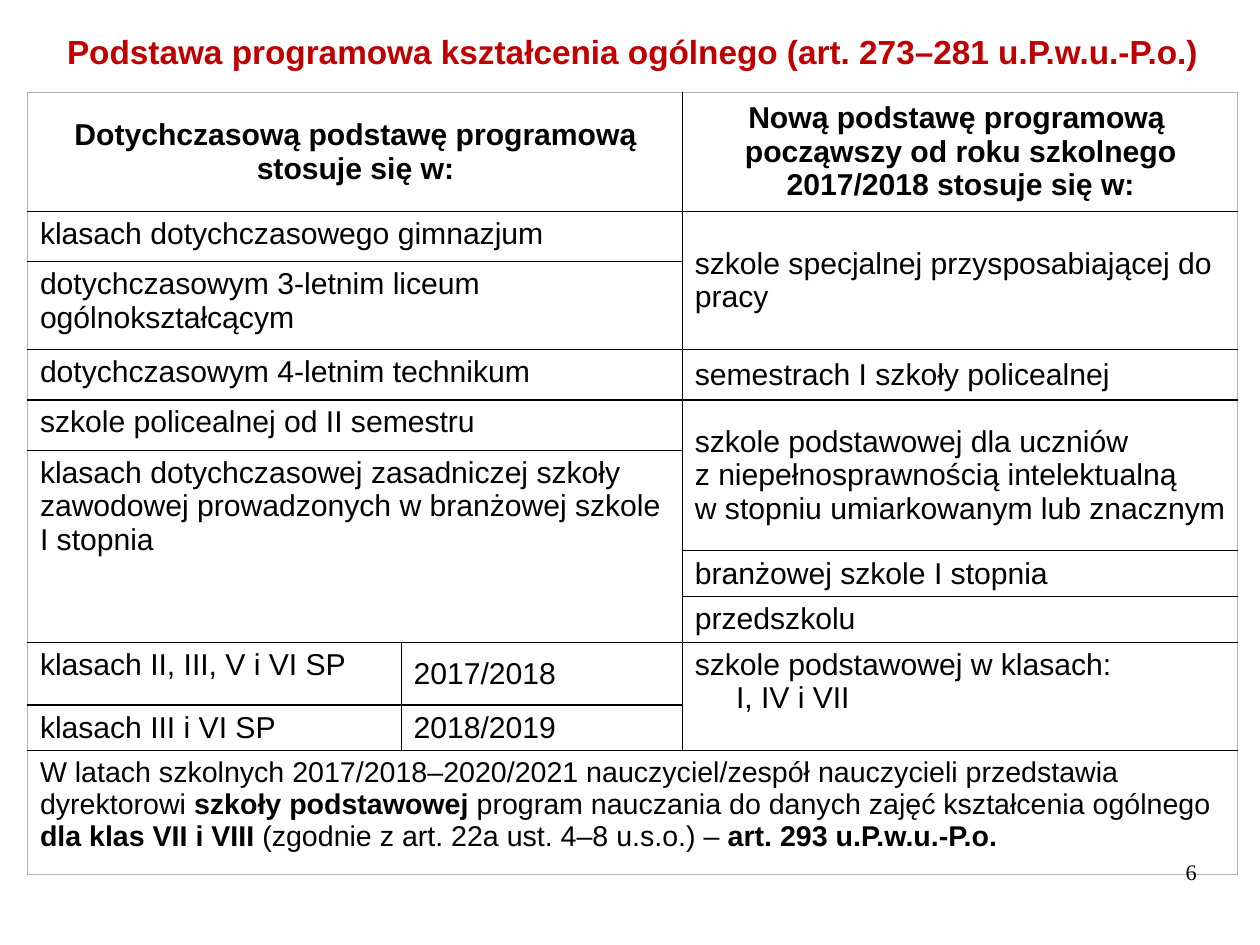
from lxml.etree import SubElement
from pptx import Presentation
from pptx.dml.color import RGBColor
from pptx.enum.text import MSO_ANCHOR, PP_ALIGN
from pptx.oxml.ns import qn
from pptx.util import Inches, Pt

RED = RGBColor(0xC0, 0x00, 0x00)
BLACK = RGBColor(0x00, 0x00, 0x00)
GREY = RGBColor(0xB2, 0xB2, 0xB2)
TOP, MIDDLE = MSO_ANCHOR.TOP, MSO_ANCHOR.MIDDLE

PAGE_WIDTH, PAGE_HEIGHT = Inches(28 / 2.54), Inches(21 / 2.54)  # 28 by 21 cm
TITLE = "Podstawa programowa kształcenia ogólnego (art. 273–281 u.P.w.u.-P.o.)"
PAGE_NUMBER = "6"
COLUMNS = [3.27, 2.46, 4.86]
ROWS = [1.04, 0.44, 0.77, 0.44, 0.44, 0.88, 0.4, 0.4, 0.55, 0.4, 1.08]

# row, column, rows spanned, columns spanned, anchor, paragraphs
HEADERS = [
    (0, 0, 1, 2, MIDDLE, ["Dotychczasową podstawę programową stosuje się w:"]),
    (0, 2, 1, 1, MIDDLE, ["Nową podstawę programową ",
                          "począwszy od roku szkolnego 2017/2018 stosuje się w:"]),
]
ENTRIES = [
    (1, 0, 1, 2, TOP, ["klasach dotychczasowego gimnazjum"]),
    (1, 2, 2, 1, MIDDLE, ["szkole specjalnej przysposabiającej do pracy"]),
    (2, 0, 1, 2, TOP, ["dotychczasowym 3-letnim liceum ogólnokształcącym"]),
    (3, 0, 1, 2, TOP, ["dotychczasowym 4-letnim technikum"]),
    (3, 2, 1, 1, MIDDLE, ["semestrach I szkoły policealnej"]),
    (4, 0, 1, 2, TOP, ["szkole policealnej od II semestru"]),
    (4, 2, 2, 1, MIDDLE, ["szkole podstawowej dla uczniów\nz niepełnosprawnością intelektualną\n"
                          "w stopniu umiarkowanym lub znacznym"]),
    (5, 0, 3, 2, TOP, ["klasach dotychczasowej zasadniczej szkoły zawodowej "
                       "prowadzonych w branżowej szkole I stopnia"]),
    (6, 2, 1, 1, MIDDLE, ["branżowej szkole I stopnia"]),
    (7, 2, 1, 1, MIDDLE, ["przedszkolu"]),
    (8, 0, 1, 1, TOP, ["klasach II, III, V i VI SP"]),
    (8, 1, 1, 1, MIDDLE, ["2017/2018"]),
    (8, 2, 2, 1, TOP, ["szkole podstawowej w klasach:", "I, IV i VII"]),
    (9, 0, 1, 1, TOP, ["klasach III i VI SP"]),
    (9, 1, 1, 1, MIDDLE, ["2018/2019"]),
]
NOTE_SPANS = [
    ("W latach szkolnych 2017/2018–2020/2021 nauczyciel/zespół nauczycieli "
     "przedstawia dyrektorowi ", False),
    ("szkoły podstawowej ", True),
    ("program nauczania do danych zajęć kształcenia ogólnego ", False),
    ("dla klas VII i VIII ", True),
    ("(zgodnie z art. 22a ust. 4–8 u.s.o.) – ", False),
    ("art. 293 u.P.w.u.-P.o.", True),
]


def add_span(para, text, size, bold=False, color=BLACK, font="Arial"):
    for number, line in enumerate(text.split("\n")):
        if number:
            para.add_line_break()
        span = para.add_run()
        span.text = line
        span.font.name, span.font.size, span.font.bold = font, Pt(size), bold
        span.font.color.rgb = color


def clear_insets(frame):
    frame.margin_left = frame.margin_right = frame.margin_top = frame.margin_bottom = 0
    frame.word_wrap = True


def set_borders(cell, row, column):
    """Grey on the outside of the table, black inside."""
    outside = {"lnL": column == 0, "lnR": column + cell.span_width == len(COLUMNS),
               "lnT": row == 0, "lnB": row + cell.span_height == len(ROWS)}
    properties = cell._tc.get_or_add_tcPr()
    for position, (side, is_outside) in enumerate(outside.items()):
        line = SubElement(properties, qn("a:" + side), w=str(Pt(1)))
        fill = SubElement(line, qn("a:solidFill"))
        SubElement(fill, qn("a:srgbClr"), val=str(GREY if is_outside else BLACK))
        properties.insert(position, line)


def place_cell(table, row, column, rows, columns, anchor):
    cell = table.cell(row, column)
    if rows * columns > 1:
        cell.merge(table.cell(row + rows - 1, column + columns - 1))
    cell.vertical_anchor = anchor
    return cell.text_frame


def write_paragraphs(frame, texts, bold, align):
    for number, text in enumerate(texts):
        para = frame.add_paragraph() if number else frame.paragraphs[0]
        para.alignment = align
        add_span(para, text, 19, bold)


def add_rules_table(page):
    table = page.shapes.add_table(len(ROWS), len(COLUMNS), Inches(0.24), Inches(0.81),
                                  Inches(sum(COLUMNS)), Inches(sum(ROWS))).table
    table.first_row = table.horz_banding = False
    for column, width in zip(table.columns, COLUMNS):
        column.width = Inches(width)
    for row, height in zip(table.rows, ROWS):
        row.height = Inches(height)

    for *place, texts in HEADERS:
        write_paragraphs(place_cell(table, *place), texts, True, PP_ALIGN.CENTER)
    for *place, texts in ENTRIES:
        write_paragraphs(place_cell(table, *place), texts, False, PP_ALIGN.LEFT)
    classes = table.cell(8, 2).text_frame.paragraphs[1]
    classes._p.get_or_add_pPr().set("marL", str(Inches(0.36)))

    note = place_cell(table, len(ROWS) - 1, 0, 1, len(COLUMNS), TOP).paragraphs[0]
    for text, bold in NOTE_SPANS:
        add_span(note, text, 18, bold)

    for row in range(len(ROWS)):
        for column in range(len(COLUMNS)):
            cell = table.cell(row, column)
            cell.margin_left, cell.margin_right = Inches(0.11), Inches(0.1)
            cell.margin_top = cell.margin_bottom = Inches(0.05)
            cell.fill.background()
            set_borders(cell, row, column)


def main():
    deck = Presentation()
    deck.slide_width, deck.slide_height = PAGE_WIDTH, PAGE_HEIGHT
    page = deck.slides.add_slide(deck.slide_layouts[5])

    title = page.shapes.title
    title.left, title.top = Inches(0.24), Inches(0.12)
    title.width, title.height = Inches(10.59), Inches(0.69)
    clear_insets(title.text_frame)
    title.text_frame.vertical_anchor = MIDDLE
    heading = title.text_frame.paragraphs[0]
    heading.alignment, heading.line_spacing = PP_ALIGN.CENTER, 0.93
    add_span(heading, TITLE, 21, True, RED)

    add_rules_table(page)

    box = page.shapes.add_textbox(Inches(7.9), Inches(7.53), Inches(2.57), Inches(0.57))
    clear_insets(box.text_frame)
    number = box.text_frame.paragraphs[0]
    number.alignment, number.line_spacing = PP_ALIGN.RIGHT, 0.95
    add_span(number, PAGE_NUMBER, 14, font="Times New Roman")

    deck.save("out.pptx")


if __name__ == "__main__":
    main()
